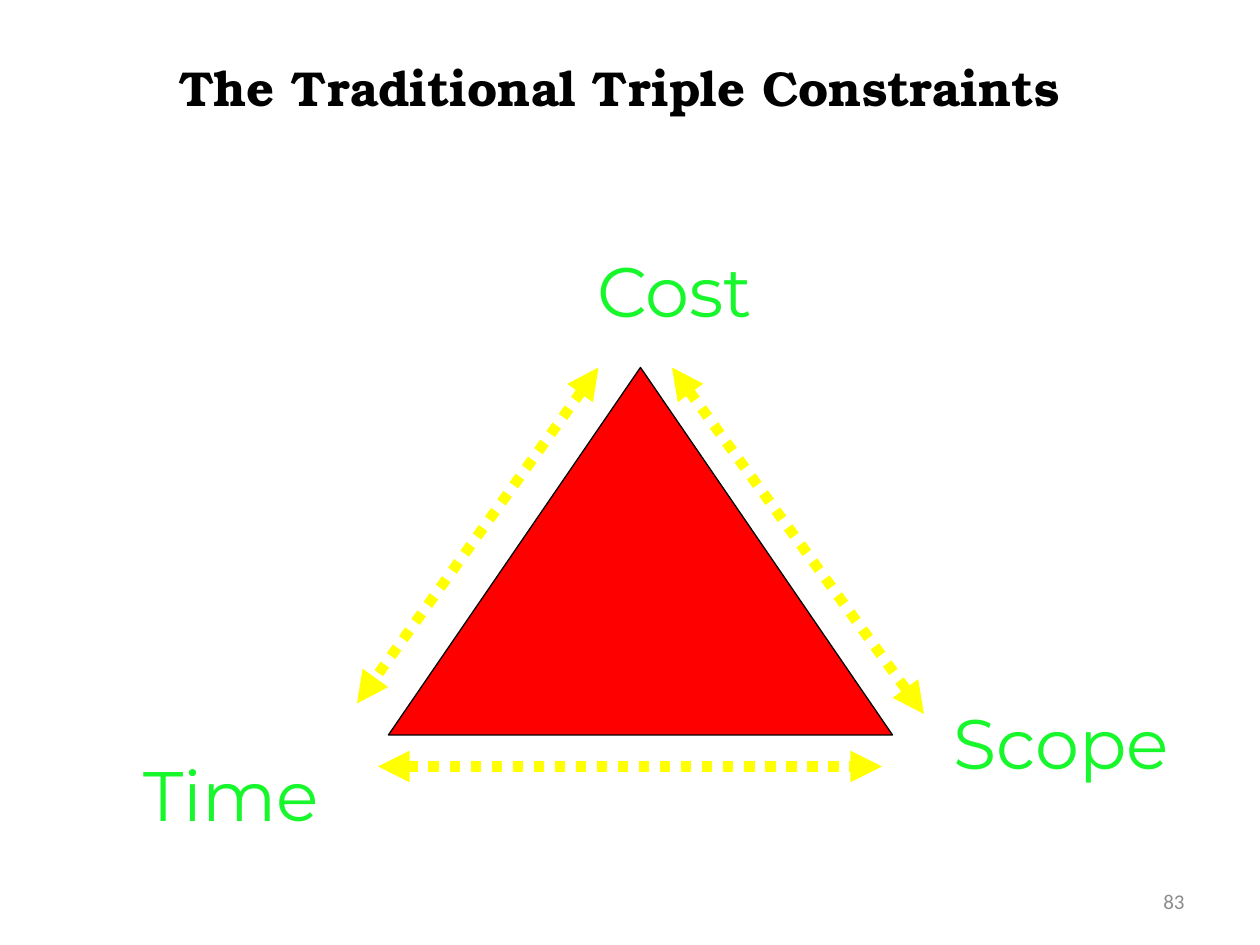
from pptx import Presentation, util as u
from pptx.dml.color import RGBColor
from pptx.enum import dml, shapes, text
from pptx.oxml.ns import qn
from lxml import etree

BLACK = RGBColor(0x00, 0x00, 0x00)
RED = RGBColor(0xFF, 0x00, 0x00)
YELLOW = RGBColor(0xFF, 0xFF, 0x00)
GREEN = RGBColor(0x17, 0xF7, 0x2C)
GRAY = RGBColor(0x8C, 0x8C, 0x8C)

COLS, ROWS = 120, 90
CELL = u.Inches(10) // COLS


def grid(*cells):
    return [u.Emu(round(c * CELL)) for c in cells]


def add_text(s, box, words, *, size, font, color, bold=False, wrap=True,
             align=text.PP_ALIGN.CENTER, anchor=text.MSO_ANCHOR.MIDDLE):
    tf = s.shapes.add_textbox(*grid(*box)).text_frame
    tf.word_wrap = wrap
    tf.vertical_anchor = anchor
    if not wrap:
        tf.auto_size = text.MSO_AUTO_SIZE.SHAPE_TO_FIT_TEXT
        tf.margin_left = tf.margin_right = 0
    p = tf.paragraphs[0]
    p.alignment = align
    r = p.add_run()
    r.text = words
    r.font.size = u.Pt(size)
    r.font.name = font
    r.font.bold = bold
    r.font.color.rgb = color


def add_double_arrow(s, start, end):
    line = s.shapes.add_connector(shapes.MSO_CONNECTOR.STRAIGHT, *grid(*start, *end))
    line.line.color.rgb = YELLOW
    line.line.width = u.Pt(6)
    line.line.dash_style = dml.MSO_LINE.ROUND_DOT
    ln = line.line._get_or_add_ln()
    for tag in ("a:headEnd", "a:tailEnd"):
        etree.SubElement(ln, qn(tag), type="triangle")
    etree.SubElement(line._element.spPr, qn("a:effectLst"))


def add_title(s, box):
    add_text(s, box, "The Traditional Triple Constraints",
             size=28, font="TeX Gyre Bonum", color=BLACK, bold=True)


def add_constraints(s, box):
    x, y, w, h = box
    sp = s.shapes.add_shape(shapes.MSO_SHAPE.ISOSCELES_TRIANGLE, *grid(*box))
    sp.shadow.inherit = False
    sp.fill.solid()
    sp.fill.fore_color.rgb = RED
    sp.line.color.rgb = BLACK
    sp.line.width = u.Pt(0.75)

    labels = [
        ("Cost", x + 19, y - 12, 16.5),
        ("Time", x - 24, y + h + 1, 18),
        ("Scope", x + w + 5, y + h - 4, 22.2),
    ]
    for words, left, top, width in labels:
        add_text(s, (left, top, width, 9.25), words, size=40, font="Montserrat",
                 color=GREEN, wrap=False, anchor=text.MSO_ANCHOR.TOP)

    arrows = [
        ((x + 20, y), (x - 3, y + h - 3)),
        ((x - 1, y + h + 3), (x + w - 1, y + h + 3)),
        ((x + 27, y), (x + w + 3, y + h - 2)),
    ]
    for start, end in arrows:
        add_double_arrow(s, start, end)


def add_page_number(s, box):
    add_text(s, box, "83", size=12, font="Calibri", color=GRAY,
             align=text.PP_ALIGN.RIGHT)


def main():
    prs = Presentation()
    prs.slide_width, prs.slide_height = grid(COLS, ROWS)
    s = prs.slides.add_slide(prs.slide_layouts[6])
    add_title(s, (3, 3.6, 112, 9.4))
    add_constraints(s, (37, 35, 48, 35))
    add_page_number(s, (86, 83.4, 28, 4.8))
    prs.save("out.pptx")


if __name__ == "__main__":
    main()
